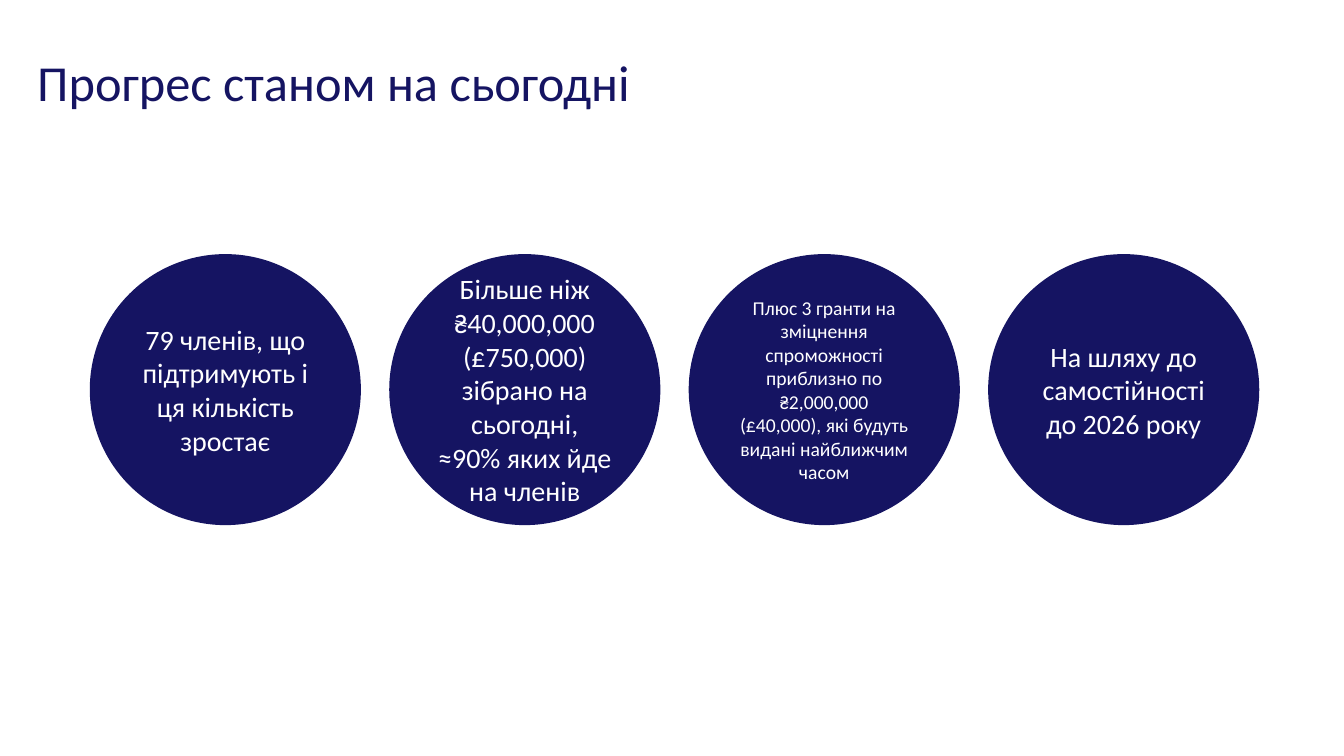
from dataclasses import dataclass

from pptx import Presentation
from pptx.dml.color import RGBColor
from pptx.enum.shapes import MSO_SHAPE
from pptx.enum.text import MSO_ANCHOR, MSO_AUTO_SIZE, PP_ALIGN
from pptx.slide import Slide
from pptx.text.text import TextFrame
from pptx.util import Inches, Pt

OVAL = MSO_SHAPE.OVAL
TOP, MIDDLE = MSO_ANCHOR.TOP, MSO_ANCHOR.MIDDLE
CENTER, RIGHT = PP_ALIGN.CENTER, PP_ALIGN.RIGHT
NO_FIT = MSO_AUTO_SIZE.NONE

FONT = "Calibri"
NAVY, WHITE = "151462", "FFFFFF"
FIRST_LEFT, CIRCLE_TOP, DIAMETER, PITCH = 0.96, 2.59, 2.55, 2.97


@dataclass
class Milestone:
    text: str
    size: int = 20


MILESTONES = [
    Milestone("79 членів, що підтримують і ця кількість зростає"),
    Milestone("Більше ніж ₴40,000,000 (£750,000) зібрано на сьогодні, "
              "≈90% яких йде на членів"),
    Milestone("Плюс 3 гранти на зміцнення спроможності приблизно по "
              "₴2,000,000 (£40,000), які будуть видані найближчим часом", 14),
    Milestone("На шляху до самостійності до 2026 року"),
]


def rgb(value: str) -> RGBColor:
    return RGBColor.from_string(value)


def write(tf: TextFrame, text: str, size: int, color: str,
          align: PP_ALIGN, anchor: MSO_ANCHOR) -> None:
    tf.word_wrap = True
    tf.auto_size = NO_FIT
    tf.vertical_anchor = anchor
    p = tf.paragraphs[0]
    p.alignment = align
    r = p.add_run()
    r.text = text
    r.font.name = FONT
    r.font.size = Pt(size)
    r.font.color.rgb = rgb(color)


def add_title(slide: Slide, text: str) -> None:
    sp = slide.shapes.title
    sp.left, sp.top = Inches(0.19), Inches(0.46)
    sp.width, sp.height = Inches(6.16), Inches(0.71)
    write(sp.text_frame, text, 36, NAVY, RIGHT, TOP)


def add_milestone(slide: Slide, item: Milestone, left: float) -> None:
    sp = slide.shapes.add_shape(OVAL, Inches(left), Inches(CIRCLE_TOP),
                                Inches(DIAMETER), Inches(DIAMETER))
    sp.shadow.inherit = False
    sp.fill.solid()
    sp.fill.fore_color.rgb = rgb(NAVY)
    sp.line.color.rgb = rgb(NAVY)
    sp.line.width = Pt(10)
    tf = sp.text_frame
    tf.margin_left = tf.margin_right = Inches(0.04)
    tf.margin_top = tf.margin_bottom = Inches(0.04)
    write(tf, item.text, item.size, WHITE, CENTER, MIDDLE)


def main() -> None:
    prs = Presentation()
    prs.slide_width, prs.slide_height = Inches(13.33), Inches(7.5)
    slide = prs.slides.add_slide(prs.slide_layouts[5])

    # Title
    add_title(slide, "Прогрес станом на сьогодні")

    # Row of milestone circles
    for i, item in enumerate(MILESTONES):
        add_milestone(slide, item, FIRST_LEFT + i * PITCH)

    prs.save("out.pptx")


if __name__ == "__main__":
    main()
